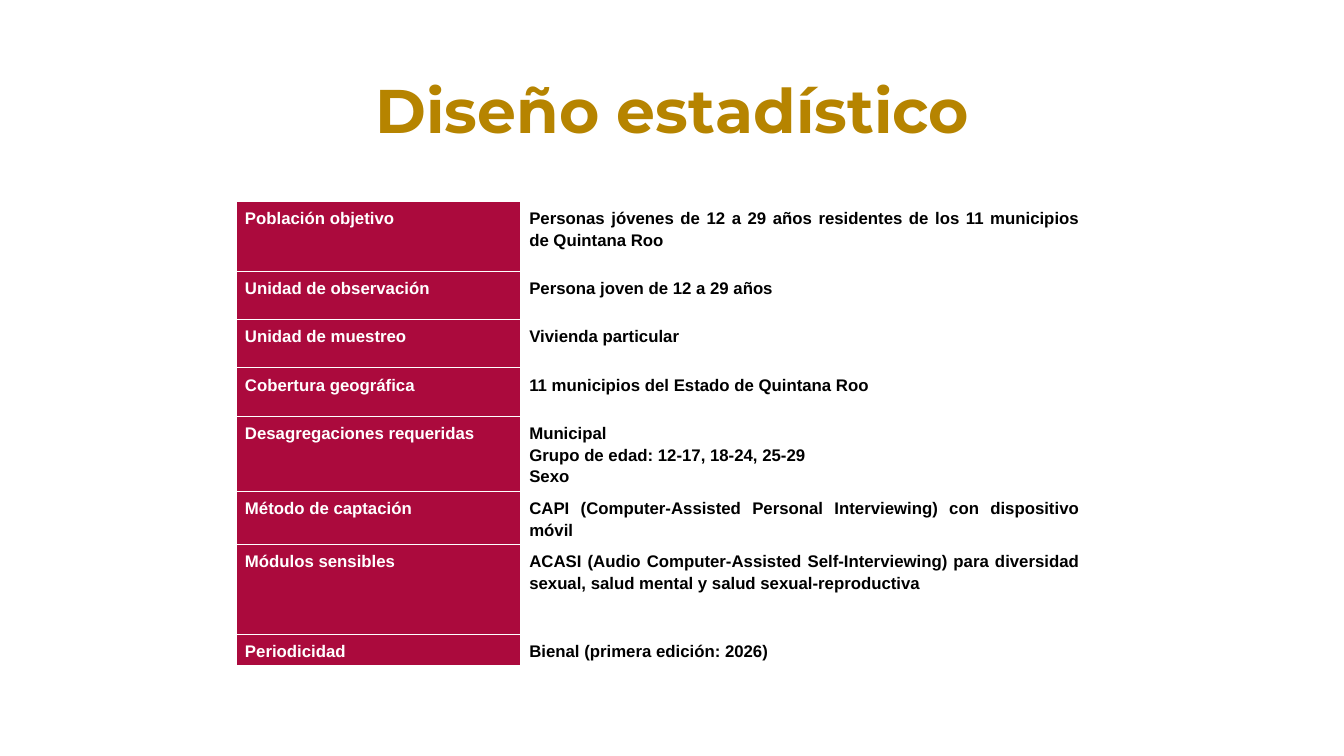
from dataclasses import dataclass

from lxml.etree import SubElement
from pptx import Presentation
from pptx.dml.color import RGBColor
from pptx.enum.text import MSO_ANCHOR, PP_ALIGN
from pptx.oxml.ns import qn
from pptx.slide import Slide
from pptx.table import Table, _Cell
from pptx.util import Inches, Pt

GOLD = "B68400"
CRIMSON = "AB0A3D"
WHITE = "FFFFFF"
BLACK = "000000"


@dataclass(frozen=True)
class DesignRow:
    label: str
    detail: str
    height: float


ROWS = [
    DesignRow("Población objetivo",
              "Personas jóvenes de 12 a 29 años residentes de los 11 municipios de Quintana Roo", 0.69),
    DesignRow("Unidad de observación", "Persona joven de 12 a 29 años", 0.48),
    DesignRow("Unidad de muestreo", "Vivienda particular", 0.48),
    DesignRow("Cobertura geográfica", "11 municipios del Estado de Quintana Roo", 0.48),
    DesignRow("Desagregaciones requeridas",
              "Municipal\nGrupo de edad: 12-17, 18-24, 25-29\nSexo", 0.69),
    DesignRow("Método de captación",
              "CAPI (Computer-Assisted Personal Interviewing) con dispositivo móvil", 0.48),
    DesignRow("Módulos sensibles",
              "ACASI (Audio Computer-Assisted Self-Interviewing) para diversidad sexual, "
              "salud mental y salud sexual-reproductiva", 0.89),
    DesignRow("Periodicidad", "Bienal (primera edición: 2026)", 0.28),
]
COLUMN_WIDTHS = [2.82, 5.64]


def color(value: str) -> RGBColor:
    return RGBColor.from_string(value)


def add_borders(cell: _Cell, line_color: str) -> None:
    """Draw a one-point border; call before the fill, which must follow it."""
    properties = cell._tc.get_or_add_tcPr()
    for side in ("a:lnL", "a:lnR", "a:lnT", "a:lnB"):
        line = SubElement(properties, qn(side), w=str(Pt(1)))
        fill = SubElement(line, qn("a:solidFill"))
        SubElement(fill, qn("a:srgbClr"), val=line_color)


def write_cell(cell: _Cell, text: str, fill_color: str, text_color: str) -> None:
    add_borders(cell, WHITE)
    cell.fill.solid()
    cell.fill.fore_color.rgb = color(fill_color)
    cell.margin_left = cell.margin_right = Inches(0.09)
    cell.margin_top = cell.margin_bottom = Inches(0.05)
    cell.text = text
    for paragraph in cell.text_frame.paragraphs:
        paragraph.alignment = PP_ALIGN.JUSTIFY
        paragraph.line_spacing = 1.15
        paragraph.font.name = "Arial"
        paragraph.font.size = Pt(12)
        paragraph.font.bold = True
        paragraph.font.color.rgb = color(text_color)


def write_title(slide: Slide, text: str) -> None:
    title = slide.shapes.title
    title.left, title.top = Inches(0.92), Inches(0.4)
    title.width, title.height = Inches(11.5), Inches(1.45)
    title.text_frame.text = text
    title.text_frame.vertical_anchor = MSO_ANCHOR.MIDDLE
    paragraph = title.text_frame.paragraphs[0]
    paragraph.alignment = PP_ALIGN.CENTER
    paragraph.line_spacing = 0.9
    paragraph.font.name = "Montserrat"
    paragraph.font.size = Pt(44)
    paragraph.font.bold = True
    paragraph.font.color.rgb = color(GOLD)


def add_design_table(slide: Slide) -> Table:
    frame = slide.shapes.add_table(
        len(ROWS), len(COLUMN_WIDTHS), Inches(2.34), Inches(2),
        Inches(sum(COLUMN_WIDTHS)), Inches(sum(row.height for row in ROWS)))
    table = frame.table
    table.first_row = False
    table.horz_banding = False
    for column, width in zip(table.columns, COLUMN_WIDTHS):
        column.width = Inches(width)
    for index, row in enumerate(ROWS):
        table.rows[index].height = Inches(row.height)
        write_cell(table.cell(index, 0), row.label, CRIMSON, WHITE)
        write_cell(table.cell(index, 1), row.detail, WHITE, BLACK)
    return table


def main() -> None:
    presentation = Presentation()
    presentation.slide_width = Inches(13.33)
    presentation.slide_height = Inches(7.5)

    # Title-only slide with the survey design table
    slide = presentation.slides.add_slide(presentation.slide_layouts[5])
    write_title(slide, "Diseño estadístico")
    add_design_table(slide)

    presentation.save("out.pptx")


if __name__ == "__main__":
    main()
